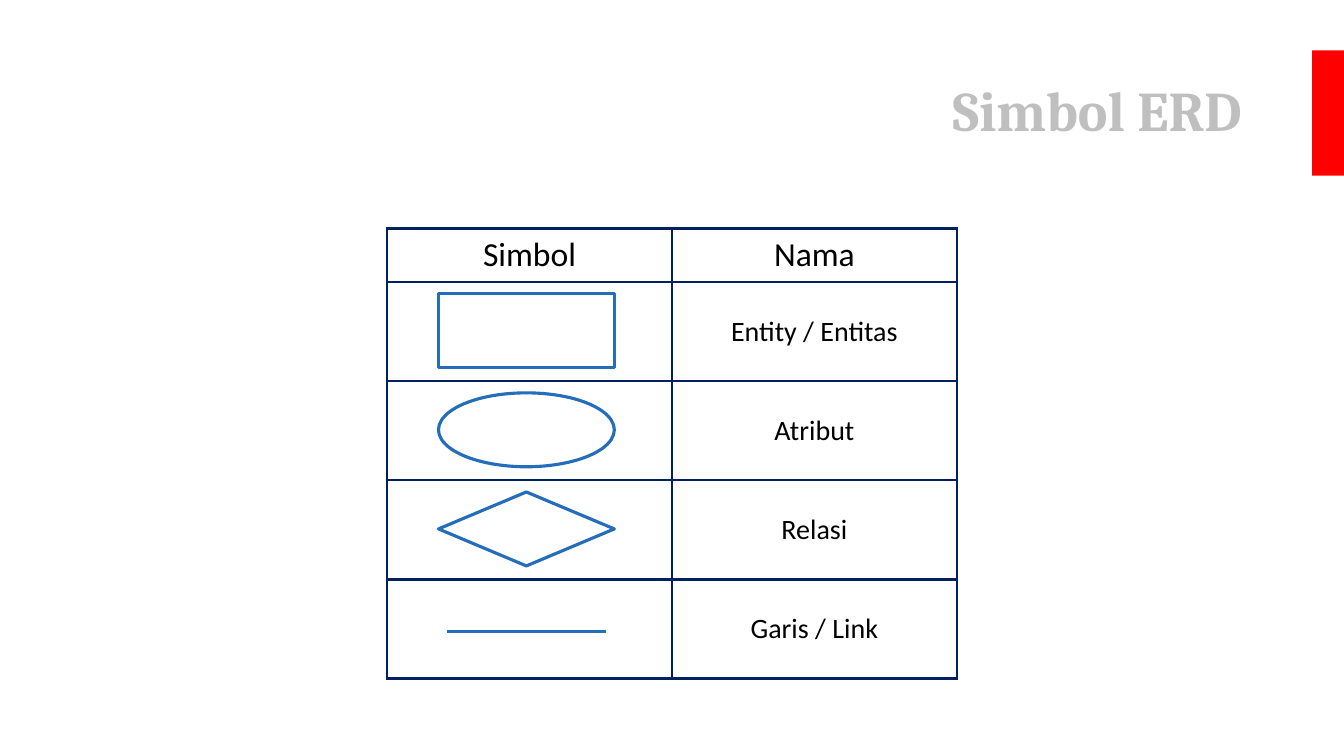
from lxml.etree import SubElement
from pptx import Presentation
from pptx.dml.color import RGBColor
from pptx.enum.shapes import MSO_CONNECTOR as CONN, MSO_SHAPE as SHAPE
from pptx.enum.text import MSO_ANCHOR as ANCHOR, PP_ALIGN as ALIGN
from pptx.oxml import parse_xml
from pptx.oxml.ns import nsdecls, qn
from pptx.util import Pt

RED = RGBColor(0xFF, 0x00, 0x00)
GREY = RGBColor(0xBF, 0xBF, 0xBF)
NAVY = RGBColor(0x00, 0x20, 0x60)
BLUE = RGBColor(0x23, 0x6D, 0xBB)
BLACK = RGBColor(0x00, 0x00, 0x00)


class ErdSlide:
    title_font = "Cambria"
    body_font = "Calibri"
    line_width = Pt(2.25)

    def __init__(self, prs):
        self.slide = prs.slides.add_slide(prs.slide_layouts[5])
        self.shapes = self.slide.shapes

    def text(self, tf, text, align, font, size, color, bold=False):
        tf.text = text
        p = tf.paragraphs[0]
        p.alignment = align
        r = p.runs[0]
        r.font.name = font
        r.font.size = Pt(size)
        r.font.bold = bold
        r.font.color.rgb = color
        return p

    def title(self, text, x, y, w, h):
        sp = self.shapes.title
        sp.left, sp.top, sp.width, sp.height = Pt(x), Pt(y), Pt(w), Pt(h)
        tf = sp.text_frame
        tf.vertical_anchor = ANCHOR.MIDDLE
        p = self.text(tf, text, ALIGN.RIGHT, self.title_font, 40, GREY, True)
        p.line_spacing = 0.9

    def shape(self, kind, x, y, w, h, fill=None, line=None):
        sp = self.shapes.add_shape(kind, Pt(x), Pt(y), Pt(w), Pt(h))
        sp.shadow.inherit = False
        if fill is None:
            sp.fill.background()
        else:
            sp.fill.solid()
            sp.fill.fore_color.rgb = fill
        if line is None:
            sp.line.fill.background()
        else:
            sp.line.color.rgb = line
            sp.line.width = self.line_width

    def line(self, x1, y1, x2, y2, color):
        cx = self.shapes.add_connector(CONN.STRAIGHT, Pt(x1), Pt(y1), Pt(x2), Pt(y2))
        cx.line.color.rgb = color
        cx.line.width = self.line_width
        SubElement(cx._element.spPr, qn("a:effectLst"))

    def borders(self, cell, color):
        tc_pr = cell._tc.get_or_add_tcPr()
        for i, side in enumerate("LRTB"):
            tc_pr.insert(i, parse_xml(
                f'<a:ln{side} {nsdecls("a")} w="{self.line_width}">'
                f'<a:solidFill><a:srgbClr val="{color}"/></a:solidFill></a:ln{side}>'))

    def table(self, rows, x, y, col_width, heights):
        cols = len(rows[0])
        frame = self.shapes.add_table(len(rows), cols, Pt(x), Pt(y),
                                      Pt(col_width * cols), Pt(sum(heights)))
        table = frame.table
        table.first_row = table.horz_banding = False
        for col in table.columns:
            col.width = Pt(col_width)
        for i, (texts, height) in enumerate(zip(rows, heights)):
            table.rows[i].height = Pt(height)
            for j, text in enumerate(texts):
                cell = table.cell(i, j)
                cell.vertical_anchor = ANCHOR.MIDDLE
                cell.fill.background()
                self.borders(cell, NAVY)
                if text:
                    self.text(cell.text_frame, text, ALIGN.CENTER, self.body_font,
                              20 if i else 24, BLACK)


def main():
    prs = Presentation()
    prs.slide_width, prs.slide_height = Pt(960), Pt(540)

    s = ErdSlide(prs)
    s.title("Simbol ERD", 66, 28.75, 828, 104.4)
    s.shape(SHAPE.RECTANGLE, 937.2, 36, 46, 89.5, fill=RED)

    names = ["Entity / Entitas", "Atribut", "Relasi", "Garis / Link"]
    row_height = 70.8
    s.table([("Simbol", "Nama")] + [("", name) for name in names],
            276.5, 163.2, 203.5, [38.2] + [row_height] * len(names))

    left, top, width, height = 313.2, 209.8, 125.6, 52.8
    for i, kind in enumerate((SHAPE.RECTANGLE, SHAPE.OVAL, SHAPE.DIAMOND)):
        s.shape(kind, left, top + i * row_height, width, height, line=BLUE)
    s.line(319.2, 451.2, 432.8, 451.2, BLUE)

    prs.save("out.pptx")


if __name__ == "__main__":
    main()
